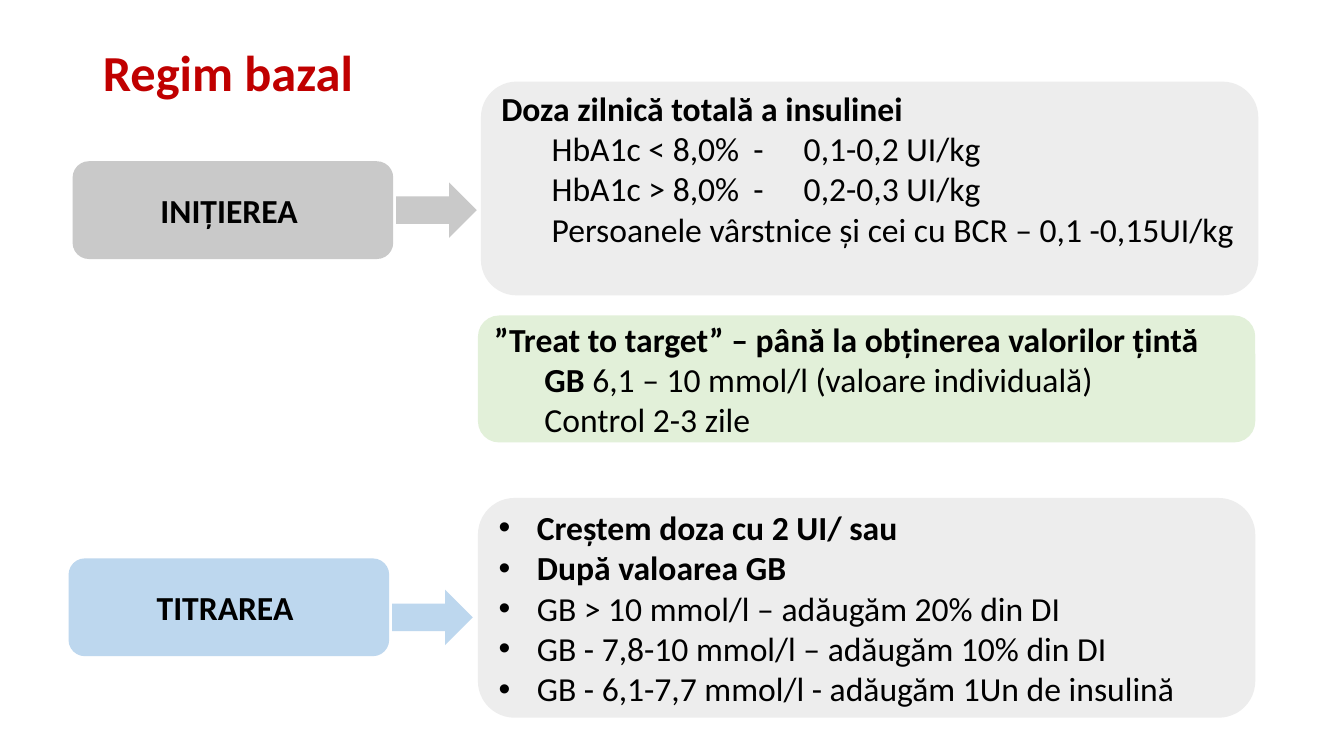
from dataclasses import dataclass

from lxml import etree
from pptx import Presentation
from pptx.dml.color import RGBColor
from pptx.enum import shapes as es, text as et
from pptx.oxml import ns
from pptx.util import Inches, Pt


@dataclass(frozen=True)
class Theme:
    font: str = "Calibri"
    head: float = 36
    body: float = 24
    red: str = "C00000"
    ink: str = "000000"
    gray: str = "C9C9C9"
    blue: str = "BDD7EE"
    pale: str = "EDEDED"
    green: str = "E2F0D9"


T = Theme()
KIND = es.MSO_SHAPE
MID = et.MSO_ANCHOR.MIDDLE
LEFT, MIDDLE = et.PP_ALIGN.LEFT, et.PP_ALIGN.CENTER


def write(para, words, size=T.body, color=T.ink, bold=False, align=LEFT):
    para.alignment = align
    run = para.add_run()
    run.text = words
    font = run.font
    font.name, font.size, font.bold = T.font, Pt(size), bold
    font.color.rgb = RGBColor.from_string(color)


def indent(para, left=0, first=0, bullet=None, tabs=()):
    """Set margins, tab stops and bullet; lengths are in inches."""
    props = para._p.get_or_add_pPr()
    props.set("marL", str(Inches(left)))
    props.set("indent", str(Inches(first)))
    if bullet:
        etree.SubElement(props, ns.qn("a:buFont"), typeface="Arial")
        etree.SubElement(props, ns.qn("a:buChar"), char=bullet)
    if tabs:
        stops = etree.SubElement(props, ns.qn("a:tabLst"))
        for pos in tabs:
            etree.SubElement(stops, ns.qn("a:tab"),
                             pos=str(Inches(pos)), algn="l")


def block(slide, kind, box, fill):
    shape = slide.shapes.add_shape(kind, *map(Inches, box))
    shape.shadow.inherit = False
    shape.fill.solid()
    shape.fill.fore_color.rgb = RGBColor.from_string(fill)
    shape.line.fill.background()
    frame = shape.text_frame
    frame.word_wrap = True
    frame.vertical_anchor = MID
    return frame


def title(slide, box, words):
    head = slide.shapes.title
    head.left, head.top, head.width, head.height = map(Inches, box)
    frame = head.text_frame
    frame.auto_size = et.MSO_AUTO_SIZE.NONE
    frame.vertical_anchor = MID
    para = frame.paragraphs[0]
    para.line_spacing = 0.9
    write(para, words, size=T.head, color=T.red, bold=True)


def stage(slide, left, top, name, fill, drop):
    """Step label with an arrow to its right, drop inches below its top."""
    frame = block(slide, KIND.ROUNDED_RECTANGLE, (left, top, 3.18, 0.97), fill)
    write(frame.paragraphs[0], name, bold=True, align=MIDDLE)
    block(slide, KIND.RIGHT_ARROW, (left + 3.21, top + drop, 0.8, 0.55), fill)


def card(slide, box, fill, lines, foot=0.05):
    """Panel of lines, each a dict of indents and a list of (words, bold)."""
    frame = block(slide, KIND.ROUNDED_RECTANGLE, box, fill)
    frame.margin_bottom = Inches(foot)
    for i, (form, runs) in enumerate(lines):
        para = frame.add_paragraph() if i else frame.paragraphs[0]
        for words, bold in runs:
            write(para, words, bold=bold)
        indent(para, **form)


def main():
    deck = Presentation()
    deck.slide_width, deck.slide_height = Inches(13.33), Inches(7.5)
    slide = deck.slides.add_slide(deck.slide_layouts[5])

    sub = {"left": 0.5}
    dose = {"tabs": (0.5, 2.59, 2.92)}
    dot = {"left": 0.38, "first": -0.38, "bullet": "•"}

    title(slide, (0.92, 0.4, 11.5, 0.7), "Regim bazal")
    stage(slide, 0.72, 1.6, "INIȚIEREA ", T.gray, drop=0.21)
    stage(slide, 0.68, 5.54, "TITRAREA ", T.blue, drop=0.31)

    card(slide, (4.74, 3.13, 7.71, 1.26), T.green, [
        ({}, [("”Treat to target” – până la obținerea valorilor țintă", True)]),
        (sub, [("GB", True), (" 6,1 – 10 mmol/l (valoare individuală)", False)]),
        (sub, [("Control 2-3 zile", False)]),
    ])
    card(slide, (4.74, 4.94, 7.71, 2.18), T.pale, [
        (dot, [(words, bold)]) for words, bold in (
            ("Creștem doza cu 2 UI/ sau", True),
            ("După valoarea GB", True),
            ("GB > 10 mmol/l – adăugăm 20% din DI", False),
            ("GB - 7,8-10 mmol/l – adăugăm 10% din DI", False),
            ("GB - 6,1-7,7 mmol/l - adăugăm 1Un de insulină", False),
        )
    ])
    card(slide, (4.77, 0.81, 7.71, 2.12), T.pale, [
        ({}, [("Doza zilnică totală a insulinei", True)]),
        (dose, [("\tHbA1c < 8,0%\t-\t0,1-0,2 UI/kg", False)]),
        (dose, [("\tHbA1c > 8,0%\t-\t0,2-0,3 UI/kg", False)]),
        (sub, [("Persoanele vârstnice și cei cu BCR – 0,1 -0,15UI/kg", False)]),
    ], foot=0.45)

    deck.save("out.pptx")


if __name__ == "__main__":
    main()
